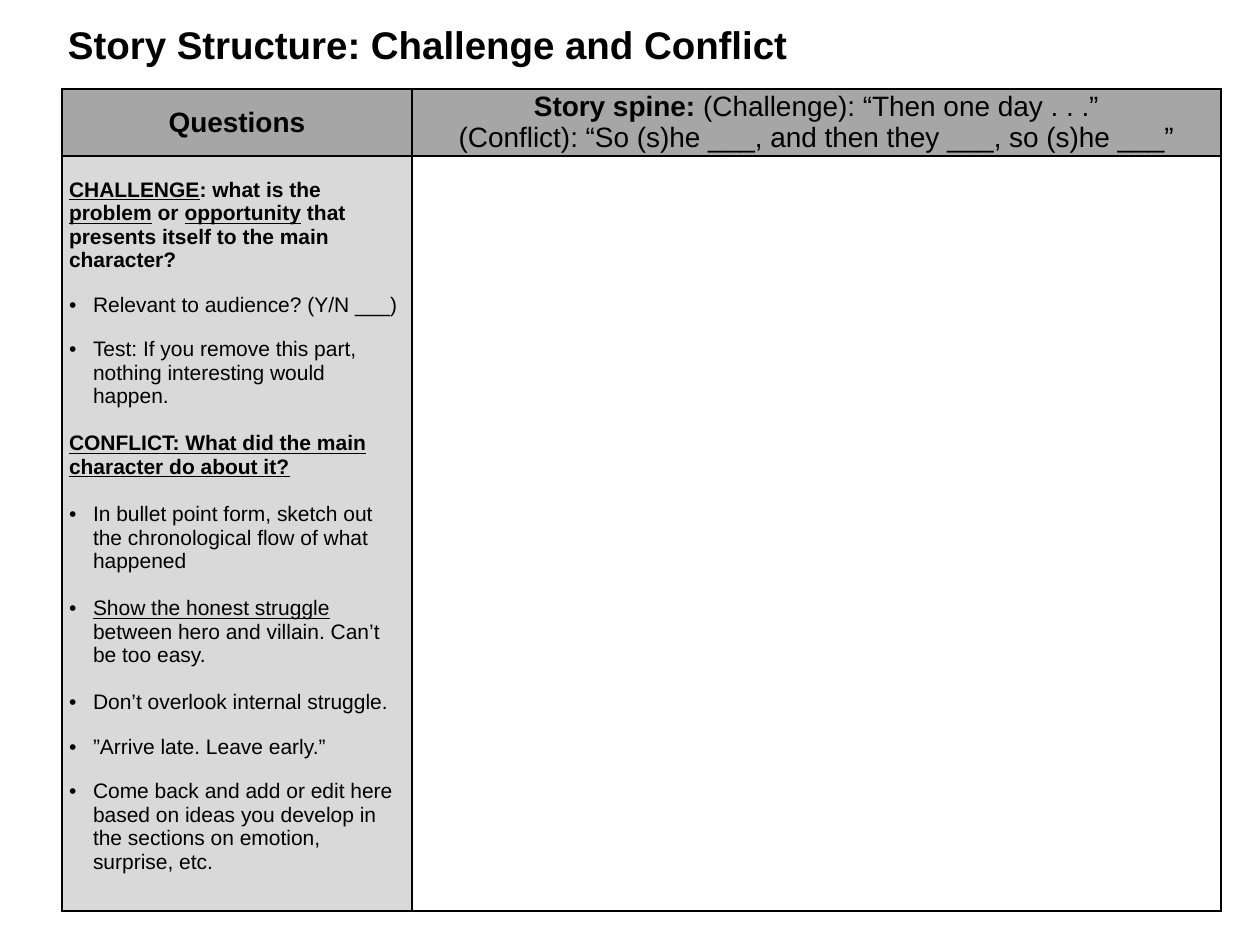
from lxml.etree import SubElement
from pptx import Presentation
from pptx.dml.color import RGBColor
from pptx.enum.text import MSO_ANCHOR, PP_ALIGN
from pptx.oxml.ns import qn
from pptx.util import Emu, Pt

PX = 914400 // 126
FONT = "Arial"
BLACK, HEADER_GREY, QUESTION_GREY = "000000", "A6A6A6", "D9D9D9"
TITLE = [("bold", 0, [("Story Structure: Challenge and Conflict", "")])]
QUESTIONS_HEADING = [("bold", 0, [("Questions", "")])]
SPINE_HEADING = [
    ("plain", 0, [("Story spine: ", "b"), ("(Challenge): “Then one day . . .”", "")]),
    ("plain", 0, [("(Conflict): “So (s)he ___, and then they ___, so (s)he ___”", "")]),
]
QUESTIONS = [
    ("bold", 0, [("CHALLENGE", "u"), (": what is the ", ""), ("problem", "u"), (" or ", ""),
                 ("opportunity", "u"), (" that presents itself to the main character?", "")]),
    ("bullet", 12, [("Relevant to audience? (Y/N ___)", "")]),
    ("bullet", 12, [("Test: If you remove this part, nothing interesting would happen.", "")]),
    ("bold", 13.5, [("CONFLICT: What did the main character do about it?", "u")]),
    ("bullet", 13.5, [("In bullet point form, sketch out the chronological flow of what happened", "")]),
    ("bullet", 13.5, [("Show the honest struggle", "u"),
                      (" between hero and villain. Can’t be too easy.", "")]),
    ("bullet", 13.5, [("Don’t overlook internal struggle.", "")]),
    ("bullet", 12, [("”Arrive late. Leave early.”", "")]),
    ("bullet", 12, [("Come back and add or edit here based on ideas you develop in "
                     "the sections on emotion, surprise, etc.", "")]),
]
COLUMNS, ROWS = (350, 809), (62, 718)
TABLE_LEFT, TABLE_TOP = 62, 89


def px(*lengths):
    return [Emu(length * PX) for length in lengths]


def color(value):
    return RGBColor.from_string(value)


def add_bullet(paragraph):
    properties = paragraph._p.get_or_add_pPr()
    indent = 24 * PX
    properties.set("marL", str(indent))
    properties.set("indent", str(-indent))
    SubElement(properties, qn("a:buFont"), typeface=FONT)
    SubElement(properties, qn("a:buChar"), char="•")


def write(frame, content, size, align=PP_ALIGN.LEFT):
    for index, (style, space, runs) in enumerate(content):
        paragraph = frame.add_paragraph() if index else frame.paragraphs[0]
        if style == "bullet":
            add_bullet(paragraph)
        paragraph.alignment = align
        paragraph.space_before = Pt(space)
        font = paragraph.font
        font.name, font.size, font.bold = FONT, Pt(size), style == "bold"
        font.color.rgb = color(BLACK)
        for text, marks in runs:
            run = paragraph.add_run()
            run.text = text
            if "b" in marks:
                run.font.bold = True
            if "u" in marks:
                run.font.underline = True


def add_borders(cell):
    properties = cell._tc.get_or_add_tcPr()
    for side in ("lnL", "lnR", "lnT", "lnB"):
        line = SubElement(properties, qn(f"a:{side}"), w=str(Pt(1)))
        SubElement(SubElement(line, qn("a:solidFill")), qn("a:srgbClr"), val=BLACK)


def style_cell(cell, fill, anchor, top=0):
    add_borders(cell)
    if fill:
        cell.fill.solid()
        cell.fill.fore_color.rgb = color(fill)
    else:
        cell.fill.background()
    cell.vertical_anchor = anchor
    cell.margin_left, cell.margin_right, cell.margin_top, cell.margin_bottom = px(7, 7, top, 0)


def add_title(slide):
    frame = slide.shapes.add_textbox(*px(63, 0, 1134, 89)).text_frame
    frame.word_wrap = True
    frame.vertical_anchor = MSO_ANCHOR.MIDDLE
    frame.margin_left, frame.margin_right, frame.margin_top, frame.margin_bottom = px(5, 5, 5, 5)
    write(frame, TITLE, 22)


def add_worksheet(slide):
    place = px(TABLE_LEFT, TABLE_TOP, sum(COLUMNS), sum(ROWS))
    worksheet = slide.shapes.add_table(len(ROWS), len(COLUMNS), *place).table
    worksheet.first_row = worksheet.horz_banding = False
    for column, width in zip(worksheet.columns, px(*COLUMNS)):
        column.width = width
    for row, height in zip(worksheet.rows, px(*ROWS)):
        row.height = height
    for index, heading in enumerate((QUESTIONS_HEADING, SPINE_HEADING)):
        cell = worksheet.cell(0, index)
        style_cell(cell, HEADER_GREY, MSO_ANCHOR.MIDDLE)
        write(cell.text_frame, heading, 16, PP_ALIGN.CENTER)
    questions, answer = worksheet.cell(1, 0), worksheet.cell(1, 1)
    style_cell(questions, QUESTION_GREY, MSO_ANCHOR.TOP, top=22)
    write(questions.text_frame, QUESTIONS, 12)
    style_cell(answer, None, MSO_ANCHOR.TOP)


def main():
    """Build the story structure worksheet slide."""
    presentation = Presentation()
    presentation.slide_width, presentation.slide_height = px(1260, 945)
    slide = presentation.slides.add_slide(presentation.slide_layouts[6])
    add_title(slide)
    add_worksheet(slide)
    presentation.save("out.pptx")


if __name__ == "__main__":
    main()
